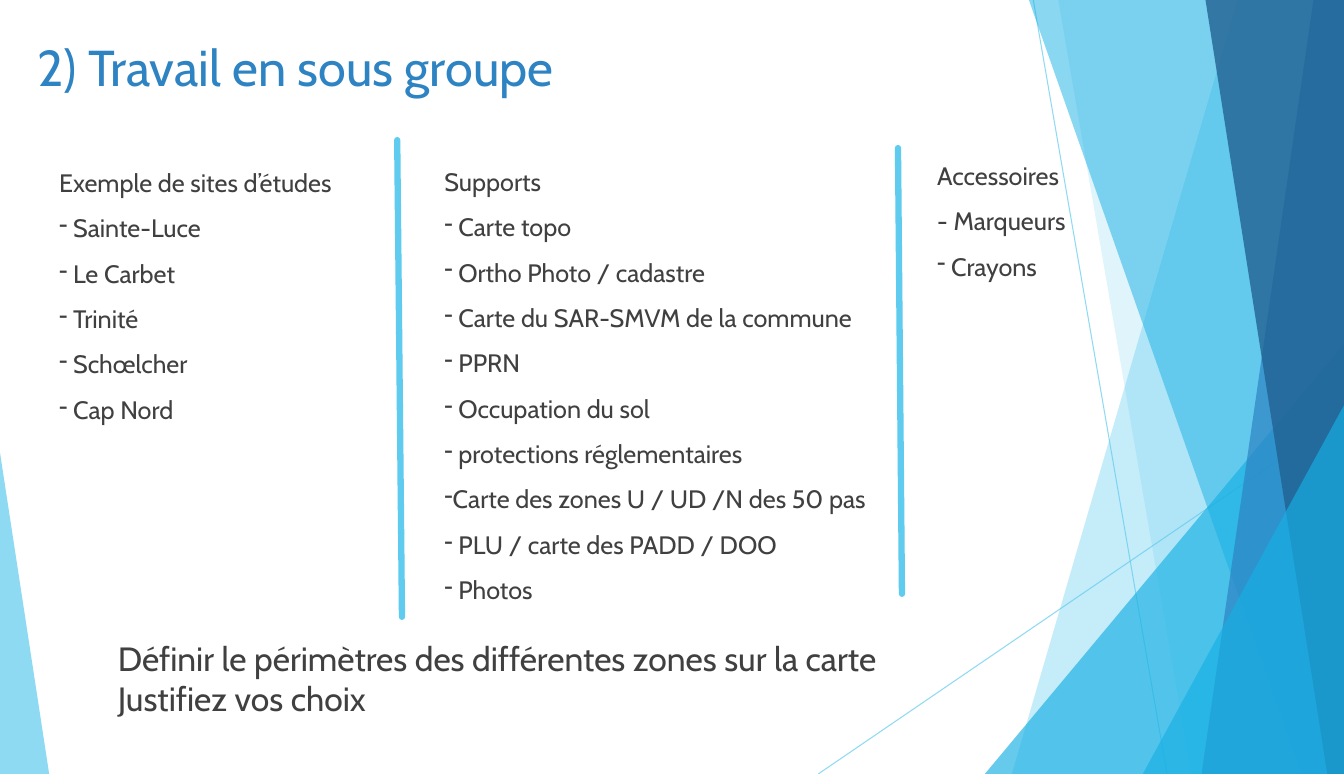
from lxml.etree import SubElement
from pptx import Presentation
from pptx.dml.color import RGBColor
from pptx.enum.shapes import MSO_CONNECTOR, MSO_SHAPE
from pptx.enum.text import MSO_ANCHOR, MSO_AUTO_SIZE
from pptx.oxml.ns import qn
from pptx.util import Cm, Pt

WIDTH, HEIGHT = 33.87, 19.5
COLORS = {
    "sky": "5FCBEF",
    "cyan": "17B0E4",
    "blue": "2E83C3",
    "navy": "226292",
    "text": "404040",
}


class SlideBuilder:
    """Holds the style and draws on the current slide; lengths are in cm."""

    font = "Cabin"

    def __init__(self, slide):
        self.slide = slide

    def paint(self, fill, color, opacity):
        fill.solid()
        fill.fore_color.rgb = RGBColor.from_string(COLORS[color])
        if opacity < 100:
            color_element = fill._xPr.find(".//" + qn("a:srgbClr"))
            SubElement(color_element, qn("a:alpha"), val=str(opacity * 1000))

    def finish(self, shape, color, opacity):
        shape.shadow.inherit = False
        shape.line.fill.background()
        self.paint(shape.fill, color, opacity)

    def shard(self, top_x, bottom_x, color, opacity):
        """Full-height band from a slanted left edge to the right of the slide."""
        builder = self.slide.shapes.build_freeform(Cm(top_x), 0)
        corners = [(WIDTH, 0), (WIDTH, HEIGHT), (bottom_x, HEIGHT)]
        builder.add_line_segments([(Cm(x), Cm(y)) for x, y in corners])
        self.finish(builder.convert_to_shape(), color, opacity)

    def triangle(self, left, top, width, apex, color, opacity):
        """Triangle standing on the bottom edge of the slide."""
        shape = self.slide.shapes.add_shape(
            MSO_SHAPE.ISOSCELES_TRIANGLE,
            Cm(left), Cm(top), Cm(width), Cm(HEIGHT - top))
        shape.adjustments[0] = apex
        self.finish(shape, color, opacity)

    def line(self, start, end, width, opacity=100, cap="flat"):
        connector = self.slide.shapes.add_connector(
            MSO_CONNECTOR.STRAIGHT, *map(Cm, start + end))
        connector.line.width = Pt(width)
        self.paint(connector.line.fill, "sky", opacity)
        connector.line._ln.set("cap", cap)
        SubElement(connector._element.spPr, qn("a:effectLst"))

    def text(self, box, lines, size, color="text", spacing=1.0, first_bullet=None):
        """Text box; paragraphs from index first_bullet on get a dash bullet."""
        frame = self.slide.shapes.add_textbox(*map(Cm, box)).text_frame
        frame.word_wrap = True
        frame.auto_size = MSO_AUTO_SIZE.NONE
        frame.vertical_anchor = MSO_ANCHOR.TOP
        for index, line in enumerate(lines):
            paragraph = frame.add_paragraph() if index else frame.paragraphs[0]
            paragraph.line_spacing = spacing
            if first_bullet is not None and index >= first_bullet:
                properties = paragraph._p.get_or_add_pPr()
                SubElement(properties, qn("a:buChar"), char="-")
            run = paragraph.add_run()
            run.text = line
            run.font.name = self.font
            run.font.size = Pt(size)
            run.font.color.rgb = RGBColor.from_string(COLORS[color])


def main():
    presentation = Presentation()
    presentation.slide_width = Cm(WIDTH)
    presentation.slide_height = Cm(HEIGHT)
    slide = presentation.slides.add_slide(presentation.slide_layouts[6])
    builder = SlideBuilder(slide)

    # Faceted decoration, from back to front
    builder.line((26.04, 0), (29.41, HEIGHT), 0.75, opacity=70)
    builder.line((WIDTH, 10.46), (20.62, HEIGHT), 0.75, opacity=70)
    builder.shard(31.19, 25.5, "sky", 36)
    builder.shard(26.67, 30.02, "sky", 20)
    builder.triangle(24.82, 8.66, 9.05, 1, "cyan", 66)
    builder.shard(25.93, 32.79, "cyan", 50)
    builder.shard(33.1, 30.28, "blue", 70)
    builder.shard(30.38, 33.45, "navy", 80)
    builder.triangle(28.8, 10.21, 5.07, 1, "cyan", 66)
    builder.triangle(0, 11.4, 1.24, 0, "sky", 70)

    # Title
    builder.text((0.69, 0.79, 16.2, 2.18), ["2) Travail en sous groupe"], 36, "blue")

    # Three columns: box, index of the first bullet, lines
    columns = [
        ((1.24, 3.71, 8.05, 7.19), 1, [
            "Exemple de sites d’études", " Sainte-Luce", " Le Carbet",
            " Trinité", " Schœlcher", " Cap Nord"]),
        ((10.95, 3.68, 11.89, 12.95), 1, [
            "Supports", " Carte topo", " Ortho Photo / cadastre",
            " Carte du SAR-SMVM de la commune", " PPRN", " Occupation du sol",
            " protections réglementaires", "Carte des zones U / UD /N des 50 pas",
            " PLU / carte des PADD / DOO", " Photos"]),
        ((23.37, 3.53, 3.91, 3.71), 2, ["Accessoires", "- Marqueurs", " Crayons"]),
    ]
    for box, first_bullet, lines in columns:
        builder.text(box, lines, 18, spacing=1.5, first_bullet=first_bullet)

    # Column dividers
    builder.line((10.01, 3.53), (10.13, 15.54), 4.5, cap="rnd")
    builder.line((22.63, 3.73), (22.73, 14.96), 4.5, cap="rnd")

    # Instructions
    builder.text((2.72, 15.95, 21.64, 2.31), [
        "Définir le périmètres des différentes zones sur la carte",
        "Justifiez vos choix"], 24)

    presentation.save("out.pptx")


if __name__ == "__main__":
    main()
